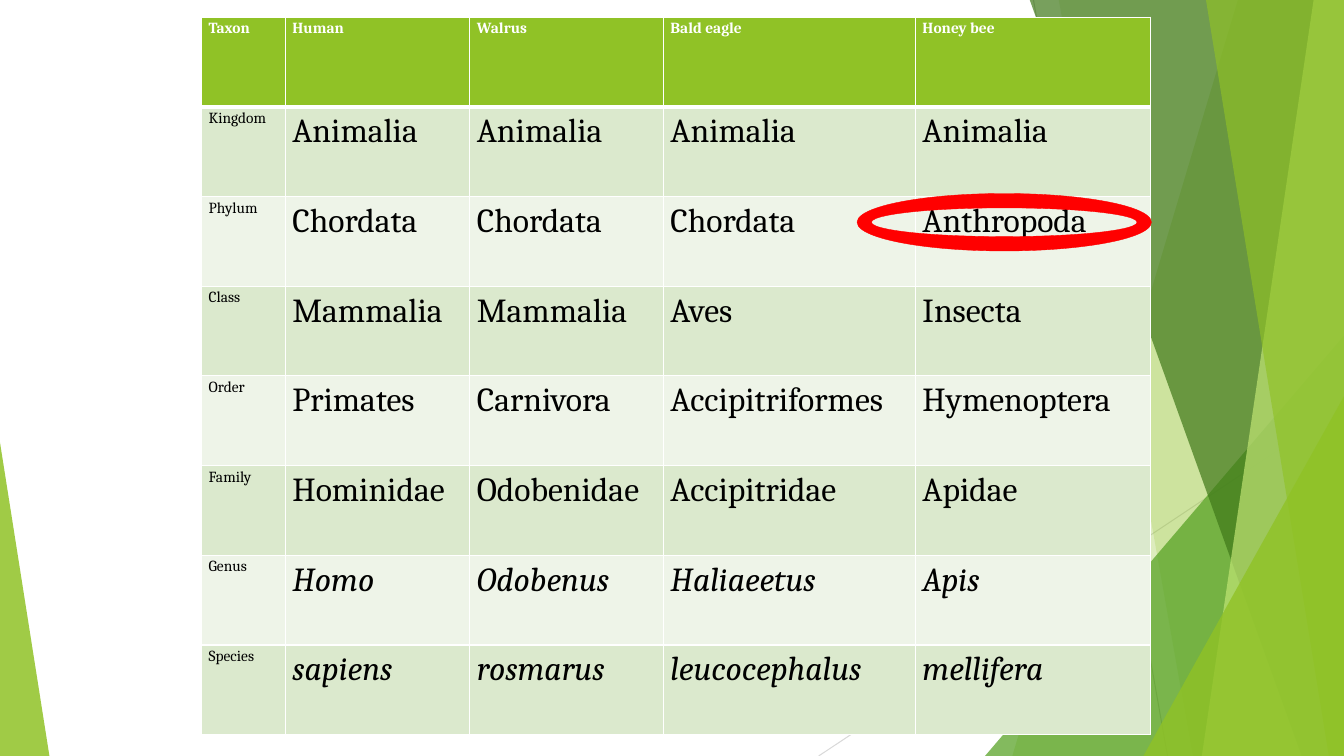
from lxml.etree import SubElement
from pptx import Presentation
from pptx.dml.color import RGBColor
from pptx.enum.shapes import MSO_CONNECTOR, MSO_SHAPE
from pptx.oxml.ns import qn
from pptx.util import Inches, Pt

COLORS = {
    "white": "FFFFFF",
    "black": "000000",
    "green": "90C226",
    "mid_green": "54A021",
    "dark_green": "3F7819",
    "light_green": "C0E474",
    "row_dark": "DBE9CD",
    "row_light": "EEF4E8",
    "gray": "BFBFBF",
    "light_gray": "D9D9D9",
    "red": "FF0000",
}
FONT = "Cambria"
RIGHT, BOTTOM, TOP = 13.33, 7.5, -0.01
COLUMN_WIDTHS = [0.83, 1.83, 1.92, 2.5, 2.33]
ROW_HEIGHT = 0.89
TAXA = [
    ["Taxon", "Human", "Walrus", "Bald eagle", "Honey bee"],
    ["Kingdom", "Animalia", "Animalia", "Animalia", "Animalia"],
    ["Phylum", "Chordata", "Chordata", "Chordata", "Anthropoda"],
    ["Class", "Mammalia", "Mammalia", "Aves", "Insecta"],
    ["Order", "Primates", "Carnivora", "Accipitriformes", "Hymenoptera"],
    ["Family", "Hominidae", "Odobenidae", "Accipitridae", "Apidae"],
    ["Genus", "Homo", "Odobenus", "Haliaeetus", "Apis"],
    ["Species", "sapiens", "rosmarus", "leucocephalus", "mellifera"],
]
ITALIC_ROWS = ("Genus", "Species")


def rgb(name):
    return RGBColor.from_string(COLORS[name])


def paint(sp, color, opacity=100):
    sp.shadow.inherit = False
    sp.fill.solid()
    sp.fill.fore_color.rgb = rgb(color)
    sp.line.fill.background()
    if opacity < 100:
        clr = next(sp.element.spPr.iter(qn("a:srgbClr")))
        SubElement(clr, qn("a:alpha")).set("val", str(opacity * 1000))


def add_line(slide, start, end, color):
    ends = [Inches(v) for v in start + end]
    line = slide.shapes.add_connector(MSO_CONNECTOR.STRAIGHT, *ends)
    line.line.color.rgb = rgb(color)
    line.line.width = Pt(0.75)
    SubElement(line.element.spPr, qn("a:effectLst"))


def add_band(slide, top_x, bottom_x, color, opacity):
    builder = slide.shapes.build_freeform(Inches(top_x), Inches(TOP))
    corners = [(RIGHT, TOP), (RIGHT, BOTTOM), (bottom_x, BOTTOM)]
    builder.add_line_segments([(Inches(x), Inches(y)) for x, y in corners])
    paint(builder.convert_to_shape(), color, opacity)


def add_triangle(slide, left, top, width, apex, color, opacity):
    sp = slide.shapes.add_shape(
        MSO_SHAPE.ISOSCELES_TRIANGLE,
        Inches(left), Inches(top), Inches(width), Inches(BOTTOM - top))
    sp.adjustments[0] = apex
    paint(sp, color, opacity)


def add_background(slide):
    add_line(slide, (10.25, 0), (11.58, BOTTOM), "gray")
    add_line(slide, (RIGHT, 4.03), (8.12, BOTTOM), "light_gray")
    add_band(slide, 12.28, 10.04, "green", 30)
    add_band(slide, 10.5, 11.83, "green", 20)
    add_triangle(slide, 9.77, 3.33, 3.56, 1, "mid_green", 72)
    add_band(slide, 10.21, 12.91, "dark_green", 70)
    add_band(slide, 13.03, 11.92, "light_green", 70)
    add_band(slide, 11.96, 13.18, "green", 65)
    add_triangle(slide, 11.34, 3.93, 1.99, 1, "green", 80)
    add_triangle(slide, 0, 4.39, 0.49, 0, "green", 85)


def set_borders(cell, top, bottom):
    tc_pr = cell._tc.get_or_add_tcPr()
    widths = {"a:lnL": 1, "a:lnR": 1, "a:lnT": top, "a:lnB": bottom}
    for i, (tag, width) in enumerate(widths.items()):
        ln = SubElement(tc_pr, qn(tag), w=str(Pt(width)))
        fill = SubElement(ln, qn("a:solidFill"))
        SubElement(fill, qn("a:srgbClr"), val=COLORS["white"])
        tc_pr.insert(i, ln)


def format_cell(cell, text, fill, color, size, bold, italic):
    cell.margin_left = cell.margin_right = Inches(0.07)
    cell.margin_top = cell.margin_bottom = 0
    cell.fill.solid()
    cell.fill.fore_color.rgb = rgb(fill)
    p = cell.text_frame.paragraphs[0]
    p.text = text
    p.line_spacing = 1.15
    font = p.runs[0].font
    font.name = FONT
    font.size = Pt(size)
    font.bold = bold
    font.italic = italic
    font.color.rgb = rgb(color)


def add_taxa_table(slide):
    table = slide.shapes.add_table(
        len(TAXA), len(COLUMN_WIDTHS), Inches(2), Inches(0.17),
        Inches(sum(COLUMN_WIDTHS)), Inches(ROW_HEIGHT * len(TAXA))).table
    for column, width in zip(table.columns, COLUMN_WIDTHS):
        column.width = Inches(width)
    for r, names in enumerate(TAXA):
        table.rows[r].height = Inches(ROW_HEIGHT)
        header = r == 0
        fill = "green" if header else "row_dark" if r % 2 else "row_light"
        for c, name in enumerate(names):
            cell = table.cell(r, c)
            small = header or c == 0
            format_cell(cell, name, fill, "white" if header else "black",
                        11 if small else 24, header,
                        names[0] in ITALIC_ROWS and not small)
            set_borders(cell, 3 if r == 1 else 1, 3 if header else 1)


def add_highlight(slide):
    ring = slide.shapes.add_shape(
        MSO_SHAPE.DONUT, Inches(8.5), Inches(1.92), Inches(2.92), Inches(0.57))
    paint(ring, "red")
    ring.line.color.rgb = rgb("red")
    ring.line.width = Pt(0.25)


def main():
    prs = Presentation()
    prs.slide_width = Inches(RIGHT)
    prs.slide_height = Inches(BOTTOM)
    slide = prs.slides.add_slide(prs.slide_layouts[6])
    add_background(slide)
    add_taxa_table(slide)
    add_highlight(slide)
    prs.save("out.pptx")


if __name__ == "__main__":
    main()
